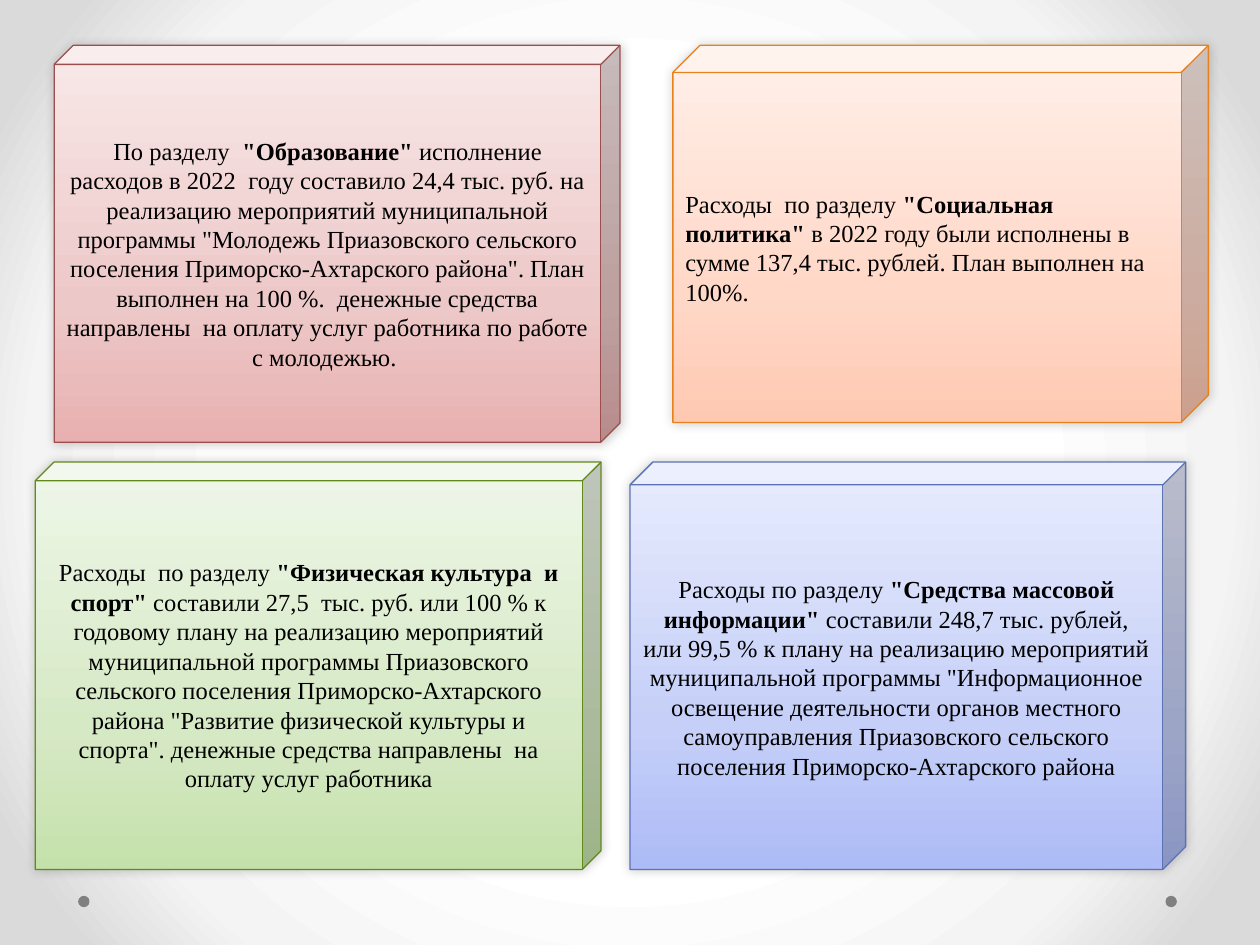
from dataclasses import dataclass

from lxml import etree
from pptx import Presentation
from pptx.dml.color import RGBColor
from pptx.enum import shapes, text
from pptx.oxml import parse_xml
from pptx.oxml.ns import nsdecls, qn
from pptx.util import Emu, Inches, Pt

WIDTH, HEIGHT = Inches(10), Inches(7.5)
TOP_ROW, BOTTOM_ROW = 0.048, 0.489
CENTER, LEFT = text.PP_ALIGN.CENTER, text.PP_ALIGN.LEFT
BACKGROUND = [(50, "FFFFFF"), (76, "F4F4F4"), (92, "DADADA")]


@dataclass(frozen=True)
class Card:
    """Position and size are shares of the slide; depth is the cube's."""
    left: float
    top: float
    width: float
    height: float
    depth: float
    shades: tuple[str, str, str]
    line: str
    runs: tuple[str, str, str]
    align: text.PP_ALIGN = CENTER


CARDS = [
    Card(0.043, TOP_ROW, 0.449, 0.42, 0.048, ("E8B0B0", "EDC8C8", "F9E9E9"), "9A4E4E", (
        "По разделу  ", '"Образование"',
        " исполнение расходов в 2022  году составило 24,4 тыс. руб. на реализацию "
        'мероприятий муниципальной программы "Молодежь Приазовского сельского '
        'поселения Приморско-Ахтарского района". План выполнен на 100 %.  денежные '
        "средства направлены  на оплату услуг работника по работе с молодежью. ")),
    Card(0.534, TOP_ROW, 0.425, 0.399, 0.072, ("FFC9B1", "FFD8C8", "FFF0EA"), "E6811C", (
        "Расходы  по разделу ", '"Социальная политика"',
        " в 2022 году были исполнены в сумме 137,4 тыс. рублей. "
        "План выполнен на 100%."), LEFT),
    Card(0.028, BOTTOM_ROW, 0.449, 0.431, 0.046, ("C5E1AB", "D6E9C5", "EFF7E9"), "62891C", (
        "Расходы  по разделу ", '"Физическая культура  и спорт"',
        " составили 27,5  тыс. руб. или 100 % к годовому плану на реализацию "
        "мероприятий муниципальной программы Приазовского сельского поселения "
        'Приморско-Ахтарского района "Развитие физической культуры и спорта". '
        "денежные средства направлены  на оплату услуг работника")),
    Card(0.5, BOTTOM_ROW, 0.441, 0.431, 0.056, ("ADBBF6", "C5CFF8", "E8ECFD"), "5C72B2", (
        "Расходы по разделу ", '"Средства массовой информации" ',
        "составили 248,7 тыс. рублей, или 99,5 % к плану на реализацию мероприятий "
        'муниципальной программы "Информационное освещение деятельности органов '
        "местного самоуправления Приазовского сельского поселения "
        "Приморско-Ахтарского района")),
]


def color(value: str) -> RGBColor:
    return RGBColor.from_string(value)


def gradient(stops, direction: str) -> str:
    """XML of a gradient fill; stops are (percent, colour) pairs."""
    marks = "".join(f'<a:gs pos="{share * 1000}"><a:srgbClr val="{value}"/></a:gs>'
                    for share, value in stops)
    return (f'<a:gradFill {nsdecls("a")} rotWithShape="1">'
            f"<a:gsLst>{marks}</a:gsLst>{direction}</a:gradFill>")


def set_background(slide) -> None:
    circle = ('<a:path path="circle"><a:fillToRect l="50000" t="50000" '
              'r="50000" b="50000"/></a:path>')
    slide.element.cSld.insert(0, parse_xml(
        f'<p:bg {nsdecls("p", "a")}><p:bgPr>{gradient(BACKGROUND, circle)}'
        "<a:effectLst/></p:bgPr></p:bg>"))


def add_shape(slide, kind, left: float, top: float, width: float, height: float):
    """Add a preset shape placed by shares of the slide's size."""
    shape = slide.shapes.add_shape(kind, Emu(int(left * WIDTH)), Emu(int(top * HEIGHT)),
                                   Emu(int(width * WIDTH)), Emu(int(height * HEIGHT)))
    shape.shadow.inherit = False
    return shape


def add_dot(slide, left: float) -> None:
    dot = add_shape(slide, shapes.MSO_SHAPE.OVAL, left, 0.948, 0.009, 0.012)
    dot.fill.solid()
    dot.fill.fore_color.rgb = color("808080")
    dot.line.fill.background()


def add_soft_shadow(shape) -> None:
    effects = shape.element.spPr.find(qn("a:effectLst"))
    shadow = etree.SubElement(effects, qn("a:outerShdw"), blurRad=str(Pt(6)),
                              dist="0", dir="18900000", rotWithShape="0")
    tint = etree.SubElement(shadow, qn("a:srgbClr"), val="000000")
    etree.SubElement(tint, qn("a:alpha"), val="20000")


def add_run(paragraph, content: str, *, bold: bool = False, size: float = 14,
            font: str = "Times New Roman", fill: str = "000000") -> None:
    run = paragraph.add_run()
    run.text = content
    run.font.name, run.font.size, run.font.bold = font, Pt(size), bold
    run.font.color.rgb = color(fill)


def add_card(slide, card: Card) -> None:
    cube = add_shape(slide, shapes.MSO_SHAPE.CUBE,
                     card.left, card.top, card.width, card.height)
    cube.adjustments[0] = card.depth
    cube.line.color.rgb = color(card.line)
    cube.line.width = Pt(0.75)
    upward = '<a:lin ang="16200000" scaled="1"/>'
    geometry = cube.element.spPr.find(qn("a:prstGeom"))
    geometry.addnext(parse_xml(gradient(zip((0, 35, 100), card.shades), upward)))
    add_soft_shadow(cube)

    frame = cube.text_frame
    frame.word_wrap = True
    frame.vertical_anchor = text.MSO_ANCHOR.MIDDLE
    paragraph = frame.paragraphs[0]
    paragraph.alignment = card.align
    for content, bold in zip(card.runs, (False, True, False)):
        add_run(paragraph, content, bold=bold)


def main() -> None:
    presentation = Presentation()
    presentation.slide_width, presentation.slide_height = WIDTH, HEIGHT
    slide = presentation.slides.add_slide(presentation.slide_layouts[6])
    set_background(slide)
    for left in (0.925, 0.062):
        add_dot(slide, left)
    for card in CARDS:
        add_card(slide, card)
    presentation.save("out.pptx")


if __name__ == "__main__":
    main()
